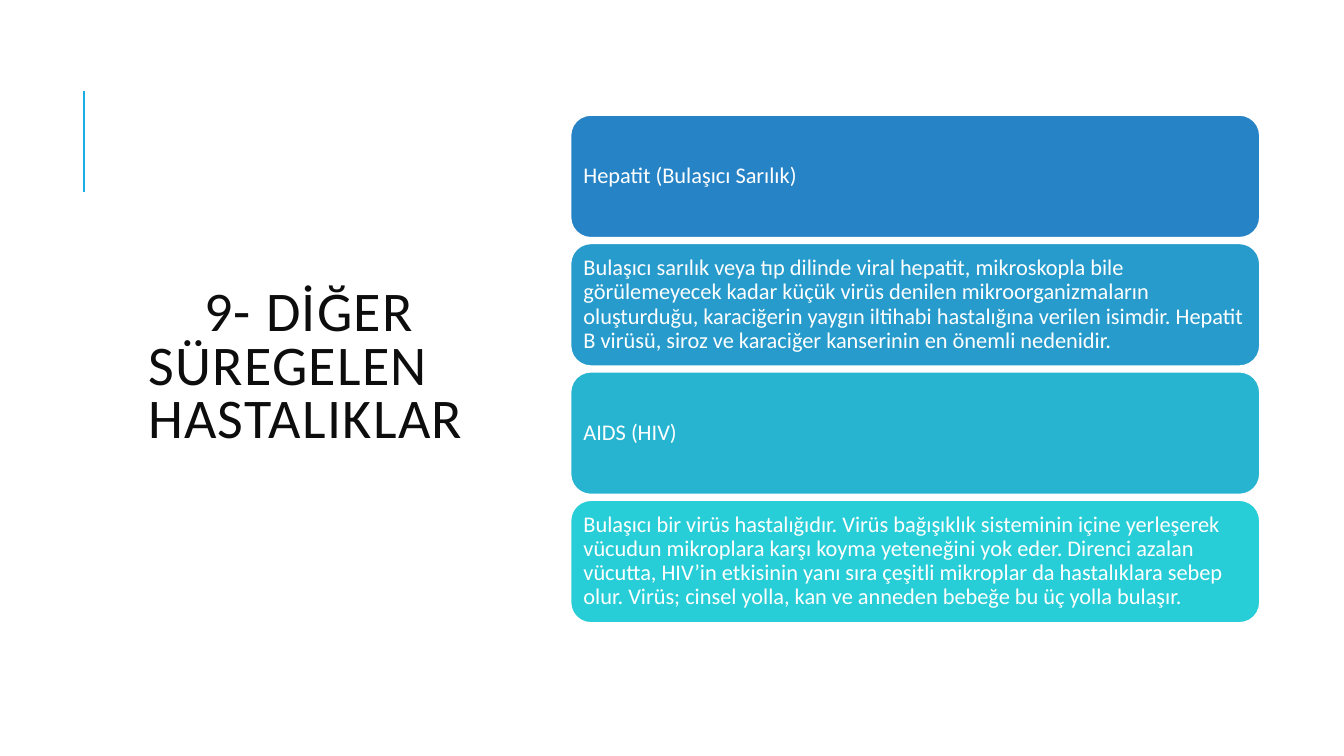
from dataclasses import dataclass

from pptx import Presentation
from pptx.dml.color import RGBColor
from pptx.enum import shapes, text
from pptx.oxml import xmlchemy
from pptx.slide import Slide
from pptx.util import Pt
from lxml import etree

COLOURS = {
    "accent": "1CADE4",
    "title": "0D0D0D",
    "white": "FFFFFF",
    "hepatitis": "2683C6",
    "hepatitis_detail": "269BCC",
    "aids": "27B4D1",
    "aids_detail": "27CED7",
}
FONT = "Calibri"
CARD_LEFT, CARD_TOP = 407.5, 82.1
CARD_WIDTH, CARD_HEIGHT = 492.5, 87.8
CARD_PITCH = 91.7
DRAWING_NS = "http://schemas.openxmlformats.org/drawingml/2006/main"


@dataclass(frozen=True)
class Card:
    wording: str
    colour: str


CARDS = [
    Card("Hepatit (Bulaşıcı Sarılık)", "hepatitis"),
    Card(
        "Bulaşıcı sarılık veya tıp dilinde viral hepatit, mikroskopla bile "
        "görülemeyecek kadar küçük virüs denilen mikroorganizmaların "
        "oluşturduğu, karaciğerin yaygın iltihabi hastalığına verilen isimdir. "
        "Hepatit B virüsü, siroz ve karaciğer kanserinin en önemli nedenidir.",
        "hepatitis_detail",
    ),
    Card("AIDS (HIV)", "aids"),
    Card(
        "Bulaşıcı bir virüs hastalığıdır. Virüs bağışıklık sisteminin içine "
        "yerleşerek vücudun mikroplara karşı koyma yeteneğini yok eder. Direnci "
        "azalan vücutta, HIV’in etkisinin yanı sıra çeşitli mikroplar da "
        "hastalıklara sebep olur. Virüs; cinsel yolla, kan ve anneden bebeğe bu "
        "üç yolla bulaşır.",
        "aids_detail",
    ),
]


def rgb(name: str) -> RGBColor:
    return RGBColor.from_string(COLOURS[name])


def write(frame, wording: str, size: float, colour: str, spacing: float) -> None:
    """Fill a text frame with one left-aligned, vertically centred paragraph."""
    frame.text = wording
    frame.word_wrap = True
    frame.auto_size = text.MSO_AUTO_SIZE.NONE
    frame.vertical_anchor = text.MSO_ANCHOR.MIDDLE
    paragraph = frame.paragraphs[0]
    paragraph.alignment = text.PP_ALIGN.LEFT
    paragraph.line_spacing = spacing
    paragraph.space_before = Pt(0)
    font = paragraph.runs[0].font
    font.name, font.size = FONT, Pt(size)
    font.color.rgb = rgb(colour)


def draw_accent_line(slide: Slide) -> None:
    accent = slide.shapes.add_connector(
        shapes.MSO_CONNECTOR.STRAIGHT, Pt(60), Pt(136.8), Pt(60), Pt(65)
    )
    accent.line.color.rgb = rgb("accent")
    accent.line.width = Pt(1.5)
    etree.SubElement(accent._element.spPr, f"{{{DRAWING_NS}}}effectLst")


def draw_title(slide: Slide) -> None:
    heading = slide.shapes.title
    heading.left, heading.top = Pt(98.6), Pt(50.4)
    heading.width, heading.height = Pt(266.4), Pt(426.2)
    write(heading.text_frame, "9- DİĞER SÜREGELEN HASTALIKLAR", 40, "title", 0.8)
    paragraph = heading.text_frame.paragraphs[0]
    paragraph._p.get_or_add_pPr().set("indent", str(Pt(40)))
    paragraph.runs[0]._r.get_or_add_rPr().set("spc", "100")


def draw_card(slide: Slide, card: Card, top: float) -> None:
    panel = slide.shapes.add_shape(
        shapes.MSO_SHAPE.ROUNDED_RECTANGLE,
        Pt(CARD_LEFT), Pt(top), Pt(CARD_WIDTH), Pt(CARD_HEIGHT),
    )
    panel.shadow.inherit = False
    panel.fill.solid()
    panel.fill.fore_color.rgb = rgb(card.colour)
    panel.line.color.rgb = rgb("white")
    panel.line.width = Pt(1.25)
    frame = panel.text_frame
    frame.margin_left = frame.margin_right = Pt(5)
    frame.margin_top = frame.margin_bottom = Pt(5)
    write(frame, card.wording, 16, "white", 0.9)


def main() -> None:
    deck = Presentation()
    deck.slide_width, deck.slide_height = Pt(960), Pt(540)
    slide = deck.slides.add_slide(deck.slide_layouts.get_by_name("Title Only"))
    draw_accent_line(slide)
    draw_title(slide)
    for row, card in enumerate(CARDS):
        draw_card(slide, card, CARD_TOP + row * CARD_PITCH)
    deck.save("out.pptx")


if __name__ == "__main__":
    main()
